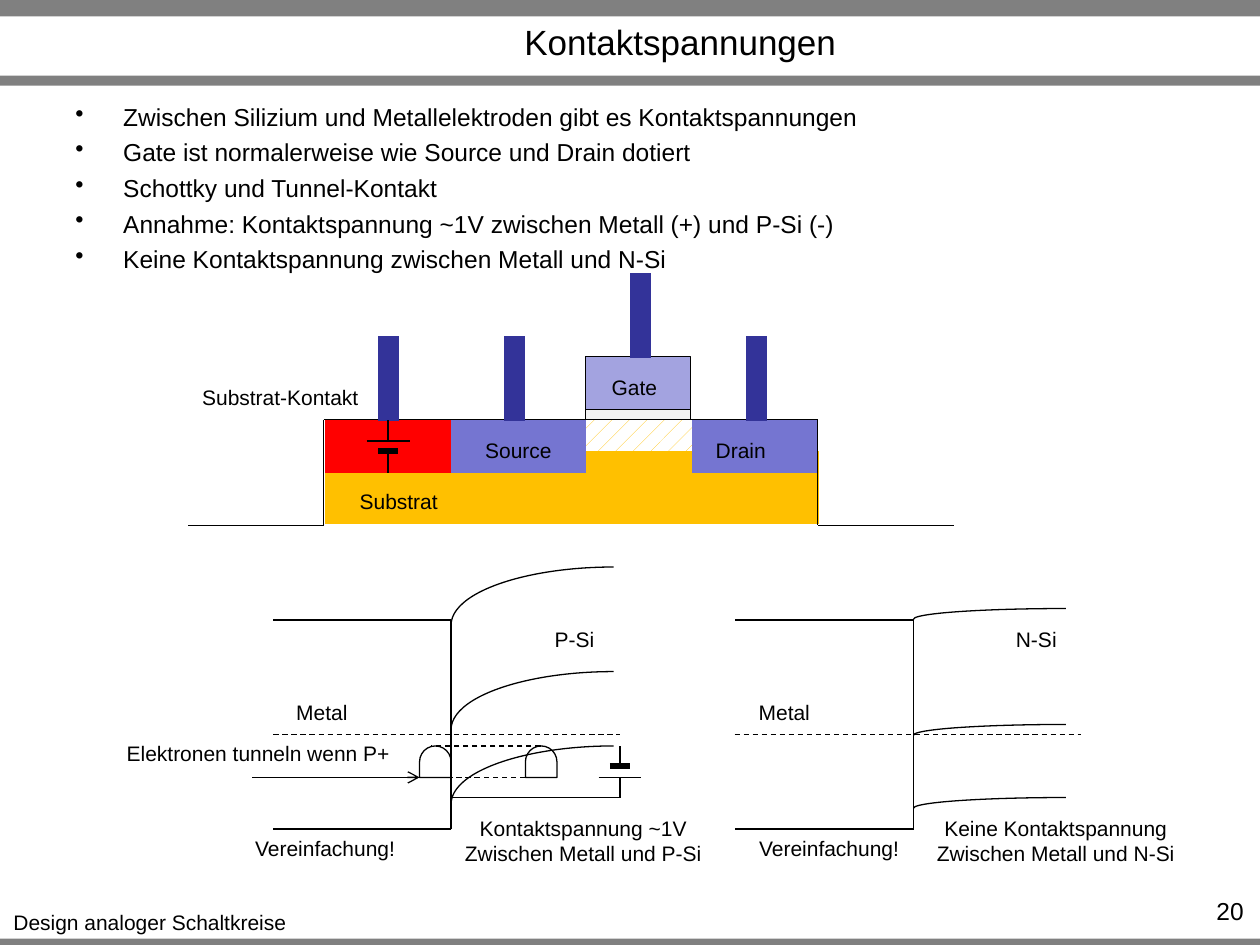
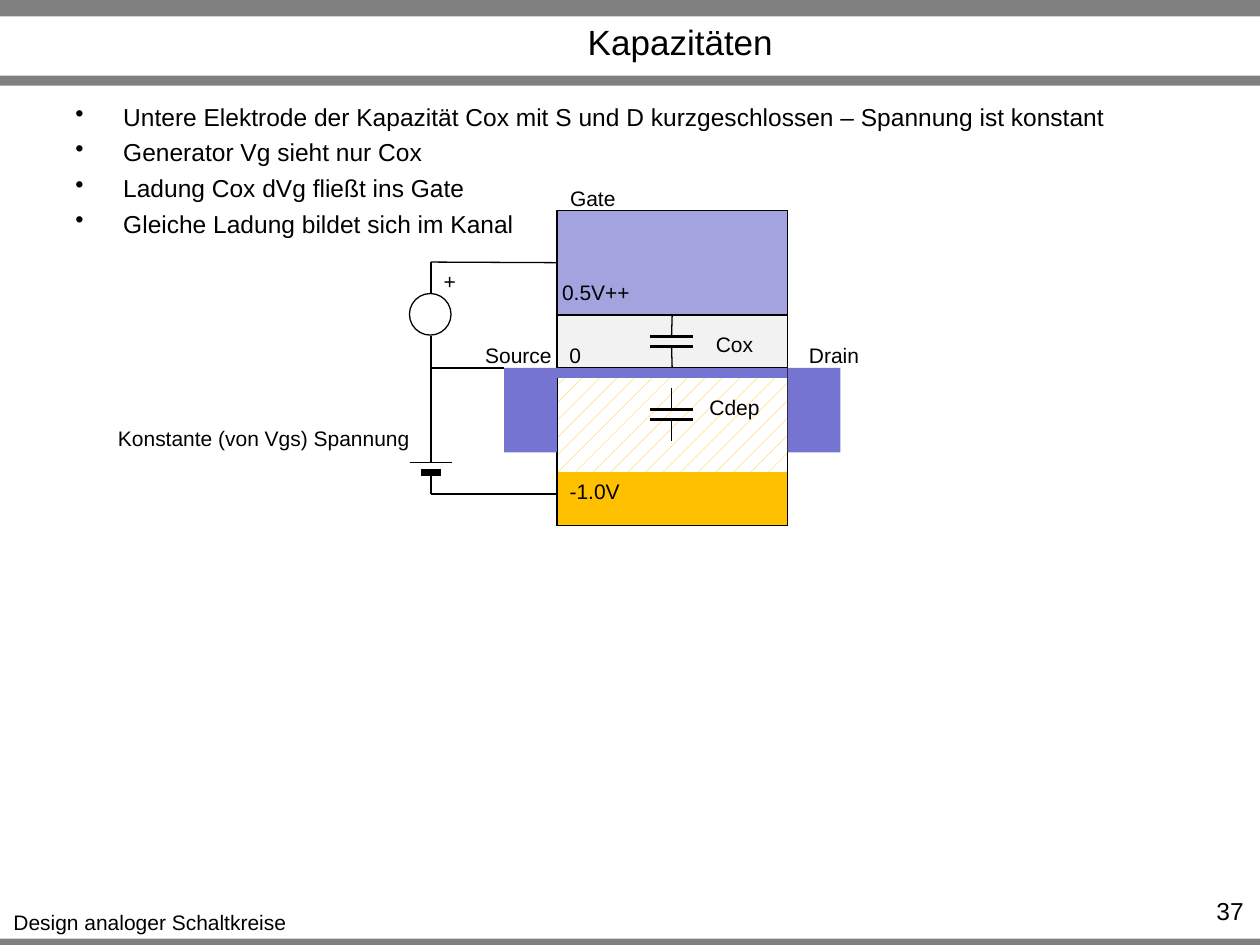
import pptx
import pptx.util
import pptx.dml.color
import pptx.enum.dml
import pptx.enum.shapes
import pptx.enum.text
import pptx.oxml.ns
from lxml import etree

Inches = pptx.util.Inches
Pt = pptx.util.Pt
RGBColor = pptx.dml.color.RGBColor
Preset = pptx.enum.shapes.MSO_SHAPE
Align = pptx.enum.text.PP_ALIGN
Anchor = pptx.enum.text.MSO_ANCHOR
qn = pptx.oxml.ns.qn

BLACK = RGBColor(0x00, 0x00, 0x00)
WHITE = RGBColor(0xFF, 0xFF, 0xFF)
BAND_GREY = RGBColor(0x80, 0x80, 0x80)
SUBSTRATE = RGBColor(0xFF, 0xC0, 0x00)
N_DOPED = RGBColor(0x75, 0x75, 0xD1)
P_DOPED = RGBColor(0xFF, 0x00, 0x00)
GATE = RGBColor(0xA3, 0xA3, 0xE0)
OXIDE = RGBColor(0xF2, 0xF2, 0xF2)
METAL = RGBColor(0x33, 0x33, 0x99)
THIN = 0.75


def draw_shape(page, preset, at, fill=None, outline=False, dotted=False):
    shape = page.shapes.add_shape(preset, *[Inches(value) for value in at])
    shape.shadow.inherit = False
    if dotted:
        shape.fill.patterned()
        shape.fill.pattern = pptx.enum.dml.MSO_PATTERN.PERCENT_5
        shape.fill.fore_color.rgb = fill
        shape.fill.back_color.rgb = WHITE
    elif fill is not None:
        shape.fill.solid()
        shape.fill.fore_color.rgb = fill
    else:
        shape.fill.background()
    if outline:
        shape.line.color.rgb = BLACK
        shape.line.width = Pt(THIN)
    else:
        shape.line.fill.background()
    return shape


def draw_line(page, x1, y1, x2, y2, weight=THIN, dashed=False):
    line = page.shapes.add_connector(
        pptx.enum.shapes.MSO_CONNECTOR.STRAIGHT,
        Inches(x1), Inches(y1), Inches(x2), Inches(y2))
    line.line.color.rgb = BLACK
    line.line.width = Pt(weight)
    if dashed:
        line.line.dash_style = pptx.enum.dml.MSO_LINE.DASH
    etree.SubElement(line._element.spPr, qn("a:effectLst"))
    return line


deck = pptx.Presentation()
deck.slide_width, deck.slide_height = Inches(10), Inches(7.5)
contact_page, capacity_page = [
    deck.slides.add_slide(deck.slide_layouts[6]) for _ in range(2)]

# Grey bands on both slides
for page in (contact_page, capacity_page):
    for top, height in ((7.45, 0.08), (0, 0.13), (0.6, 0.08)):
        draw_shape(page, Preset.RECTANGLE, (0, top, 10, height), BAND_GREY)

# Transistor cross-section
process = Preset.FLOWCHART_PROCESS
draw_shape(contact_page, process, (2.58, 3.58, 3.92, 0.58), SUBSTRATE)
draw_shape(contact_page, process, (4.58, 3.33, 1, 0.25), SUBSTRATE, dotted=True)
draw_shape(contact_page, process, (5.49, 3.33, 1, 0.42), N_DOPED)
draw_shape(contact_page, process, (3.57, 3.33, 1.08, 0.42), N_DOPED)
substrate_contact = draw_shape(
    contact_page, process, (2.58, 3.33, 1, 0.42), P_DOPED)
for ends in ((2.57, 3.33, 2.57, 4.17), (6.49, 3.33, 6.49, 4.17),
             (2.57, 3.33, 6.49, 3.33), (2.57, 4.17, 1.49, 4.17),
             (7.57, 4.17, 6.49, 4.17)):
    draw_line(contact_page, *ends)
draw_shape(contact_page, Preset.RECTANGLE, (4.65, 2.83, 0.83, 0.42), GATE, True)
draw_shape(contact_page, process, (4.65, 3.25, 0.83, 0.08), OXIDE, True)
for left, top in ((3, 2.67), (4, 2.67), (5.92, 2.67), (5, 2.17)):
    draw_shape(contact_page, process, (left, top, 0.17, 0.67), METAL)

# Band diagrams: metal on the left of the junction, silicon on the right
for left, junction, arc_tops, arc_width, arc_height in (
        (2.17, 3.58, (4.5, 5.33, 5.92), 2.58, 0.92),
        (5.83, 7.25, (4.83, 5.75, 6.33), 2.42, 0.17)):
    draw_line(contact_page, left, 5.83, left + 2.75, 5.83, dashed=True)
    draw_line(contact_page, junction, 6.58, junction, 4.92)
    for level in (4.92, 6.58):
        draw_line(contact_page, junction, level, left, level)
    for top in arc_tops:
        arc = draw_shape(contact_page, Preset.ARC,
                         (junction, top, arc_width, arc_height), outline=True)
        arc._element.spPr.find(qn("a:xfrm")).set("flipH", "1")
draw_line(contact_page, 3.58, 6.33, 4.92, 6.33)

# Tunnelling electrons
for left in (4.17, 3.33):
    electron = draw_shape(contact_page, Preset.FLOWCHART_DELAY,
                          (left, 5.92, 0.25, 0.25), outline=True)
    electron.rotation = 270
draw_line(contact_page, 4.29, 5.92, 3.42, 5.92, dashed=True)
draw_line(contact_page, 4.38, 6.17, 3.5, 6.17, dashed=True)
arrow = draw_line(contact_page, 2, 6.17, 3.33, 6.17)
etree.SubElement(arrow.line._get_or_add_ln(), qn("a:tailEnd"), type="arrow")

# Layer stack of the gate capacitor
stack_left, stack_width = 4.42, 1.83
layers = {}
for name, top, height, fill, outline, dotted in (
        ("substrate", 2.92, 1.25, SUBSTRATE, True, False),
        ("depletion", 2.92, 0.83, SUBSTRATE, False, True),
        ("oxide", 2.5, 0.42, OXIDE, True, False),
        ("gate", 1.67, 0.83, GATE, True, False),
        ("frame", 2.92, 1.25, None, True, False),
        ("channel", 2.92, 0.08, N_DOPED, False, False)):
    layers[name] = draw_shape(capacity_page, process,
                              (stack_left, top, stack_width, height),
                              fill, outline, dotted)
for left in (stack_left - 0.42, stack_left + stack_width):
    draw_shape(capacity_page, Preset.RECTANGLE, (left, 2.92, 0.42, 0.67), N_DOPED)

# Voltage generator and its wires
draw_shape(capacity_page, Preset.OVAL, (3.25, 2.33, 0.33, 0.33), outline=True)
for ends in ((3.42, 2.92, 4, 2.92), (3.42, 3.5, 3.42, 2.92),
             (3.42, 3.92, 4.42, 3.92), (3.42, 2.67, 3.42, 2.92),
             (3.42, 2.08, 3.42, 2.33)):
    draw_line(capacity_page, *ends)
draw_line(capacity_page, 4.42, 2.08, 3.42, 2.08).begin_connect(layers["gate"], 1)

# Batteries and capacitors: two plates (half width, weight) with a lead each
battery = ((0.17, THIN), (0.08, 3.5))
capacitor = ((0.17, 2), (0.17, 2))
leads = {}
for name, page, x, plates, plate_levels, lead_ends in (
        ("contact", contact_page, 3.08, battery, (3.5, 3.58), (3.33, 3.75)),
        ("p_silicon", contact_page, 4.92, battery, (6.17, 6.08), (6.33, 5.92)),
        ("cox", capacity_page, 5.33, capacitor, (2.67, 2.75), (2.5, 2.92)),
        ("cdep", capacity_page, 5.33, capacitor, (3.25, 3.33), (3.08, 3.5)),
        ("bias", capacity_page, 3.42, battery, (3.67, 3.75), (3.5, 3.92))):
    leads[name] = []
    for (half, weight), level, lead_end in zip(plates, plate_levels, lead_ends):
        draw_line(page, x - half, level, x + half, level, weight)
        leads[name].append(draw_line(page, x, level, x, lead_end))
for name, body in (("contact", substrate_contact), ("cox", layers["oxide"])):
    leads[name][0].end_connect(body, 0)
    leads[name][1].end_connect(body, 2)

# Wording: title, bullets, page number, then labels (left, top, width, text)
contents = (
    (contact_page, "Kontaktspannungen", "20", (
        "Zwischen Silizium und Metallelektroden gibt es Kontaktspannungen",
        "Gate ist normalerweise wie Source und Drain dotiert",
        "Schottky und Tunnel-Kontakt",
        "Annahme: Kontaktspannung ~1V zwischen Metall (+) und P-Si (-)",
        "Keine Kontaktspannung zwischen Metall und N-Si",
    ), (
        (3.75, 3.42, 0.73, "Source"),
        (5.58, 3.42, 0.6, "Drain"),
        (4.75, 2.92, 0.57, "Gate"),
        (1.5, 3, 1.45, "Substrat-Kontakt"),
        (2.75, 3.83, 0.83, "Substrat"),
        (2.25, 5.5, 0.61, "Metal"),
        (5.92, 5.5, 0.61, "Metal"),
        (4.3, 4.92, 0.52, "P-Si"),
        (7.96, 4.92, 0.53, "N-Si"),
        (3.58, 6.42, 2.1, "Kontaktspannung ~1V\nZwischen Metall und P-Si"),
        (7.33, 6.42, 2.1, "Keine Kontaktspannung\nZwischen Metall und N-Si"),
        (0.9, 5.83, 2.3, "Elektronen tunneln wenn P+"),
        (1.92, 6.58, 1.32, "Vereinfachung!"),
        (5.92, 6.58, 1.32, "Vereinfachung!"),
    )),
    (capacity_page, "Kapazitäten", "37", (
        "Untere Elektrode der Kapazität Cox mit S und D kurzgeschlossen"
        " – Spannung ist konstant",
        "Generator Vg sieht nur Cox",
        "Ladung Cox dVg fließt ins Gate",
        "Gleiche Ladung bildet sich im Kanal",
    ), (
        (4.42, 3.75, 0.6, "-1.0V"),
        (4.36, 2.17, 0.74, "0.5V++"),
        (4.42, 2.67, 0.29, "0"),
        (5.58, 2.58, 0.5, "Cox"),
        (5.53, 3.08, 0.6, "Cdep"),
        (0.83, 3.33, 2.53, "Konstante (von Vgs) Spannung"),
        (3.42, 2.08, 0.3, "+"),
        (4.42, 1.42, 0.57, "Gate"),
        (3.75, 2.67, 0.73, "Source"),
        (6.32, 2.67, 0.6, "Drain"),
    )),
)

styles = {
    "title": {"size": 20, "align": Align.CENTER, "anchor": Anchor.MIDDLE, "wrap": True},
    "bullets": {"size": 14, "align": Align.LEFT, "anchor": Anchor.TOP, "wrap": True},
    "number": {"size": 14, "align": Align.RIGHT, "anchor": Anchor.TOP, "wrap": True},
    "label": {"size": 12, "align": Align.CENTER, "anchor": Anchor.TOP, "wrap": False},
}

for page, title, number, bullets, labels in contents:
    texts = [("title", (1.3, 0.14, 8.2, 0.38), [title]),
             ("bullets", (0.5, 0.76, 9, 0.49), bullets),
             ("number", (9.1, 7.06, 0.87, 0.24), [number]),
             ("label", (0, 7.17, 2.38, 0.3), ["Design analoger Schaltkreise"])]
    for left, top, width, wording in labels:
        lines = wording.split("\n")
        texts.append(("label", (left, top, width, 0.1 + 0.2 * len(lines)), lines))

    for kind, at, lines in texts:
        style = styles[kind]
        box = page.shapes.add_textbox(*[Inches(value) for value in at])
        frame = box.text_frame
        for attribute, value in {"word_wrap": style["wrap"],
                                 "vertical_anchor": style["anchor"]}.items():
            setattr(frame, attribute, value)
        for index, line in enumerate(lines):
            para = frame.paragraphs[0] if index == 0 else frame.add_paragraph()
            para.alignment = style["align"]
            if kind == "bullets":
                properties = para._p.get_or_add_pPr()
                properties.set("marL", str(Inches(0.38)))
                properties.set("indent", str(-Inches(0.38)))
                etree.SubElement(properties, qn("a:buChar"), char="•")
                if index:
                    para.space_before = Pt(3.5)
            span = para.add_run()
            span.text = line
            span.font.color.rgb = BLACK
            for attribute, value in {"name": "Arial",
                                     "size": Pt(style["size"])}.items():
                setattr(span.font, attribute, value)

deck.save("out.pptx")
